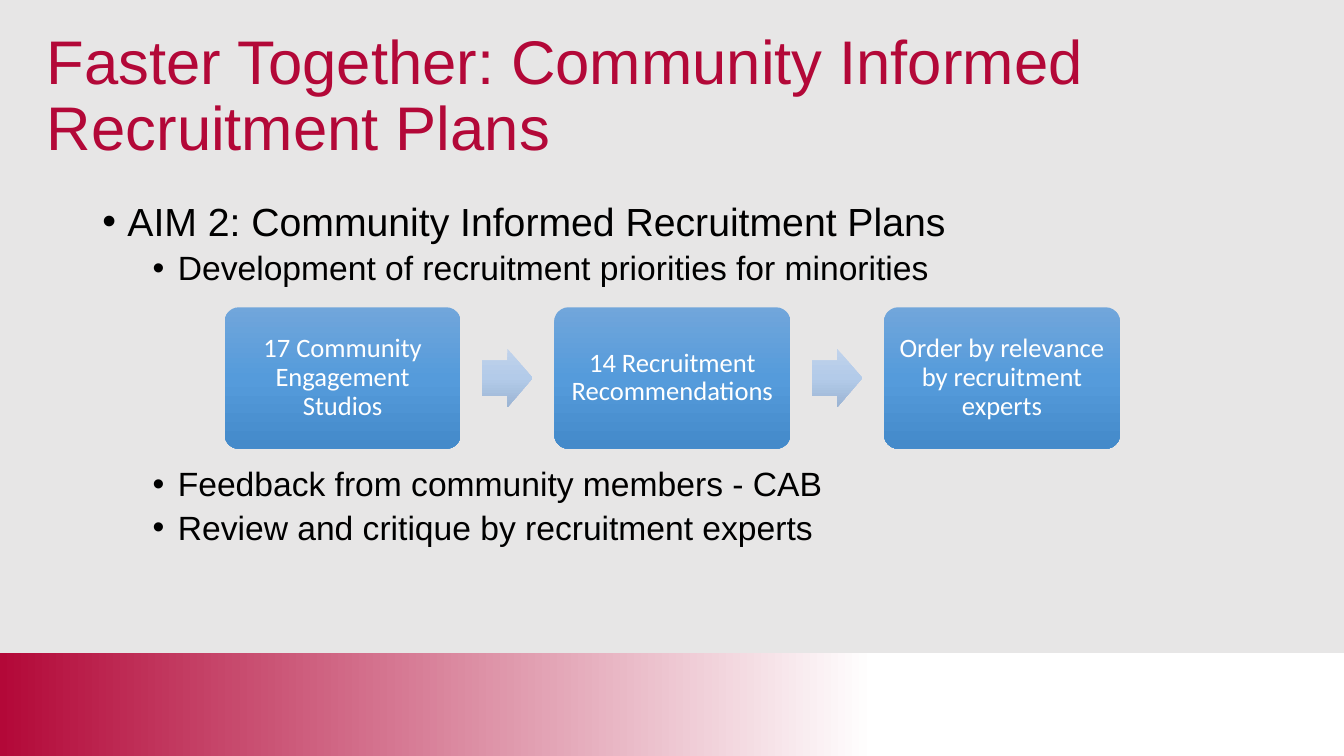
import copy

import lxml.etree
import pptx
import pptx.dml.color
import pptx.enum.shapes
import pptx.enum.text
import pptx.oxml.ns
import pptx.util

Pt = pptx.util.Pt
RGB = pptx.dml.color.RGBColor
SHAPE = pptx.enum.shapes.MSO_SHAPE
ALIGN = pptx.enum.text.PP_ALIGN
ANCHOR = pptx.enum.text.MSO_ANCHOR
qn = pptx.oxml.ns.qn

GREY = RGB(0xE7, 0xE6, 0xE6)
CRIMSON = RGB(0xB3, 0x08, 0x38)
WHITE = RGB(0xFF, 0xFF, 0xFF)
BLACK = RGB(0, 0, 0)
BAND_STOPS = [(0.35, WHITE), (1, CRIMSON)]
STEP_STOPS = [(0, RGB(0x71, 0xA6, 0xDB)), (0.5, RGB(0x55, 0x9B, 0xDB)),
              (1, RGB(0x44, 0x8A, 0xCA))]
ARROW_STOPS = [(0, RGB(0xC0, 0xD2, 0xEB)), (0.5, RGB(0xB3, 0xCB, 0xE9)),
               (1, RGB(0x9B, 0xB4, 0xD3))]

TITLE = "Faster Together: Community Informed Recruitment Plans"
BULLETS = [
    ("AIM 2: Community Informed Recruitment Plans", 0, 0),
    ("Development of recruitment priorities for minorities", 1, 5),
    ("Feedback from community members - CAB", 1, 128.5),
    ("Review and critique by recruitment experts", 1, 5),
]
STEPS = ["17 Community Engagement Studios", "14 Recruitment Recommendations",
         "Order by relevance by recruitment experts"]


def add_text(p, text, size, color, font="Arial", align=ALIGN.LEFT, before=0):
    """Fill a paragraph with one formatted run."""
    p.alignment = align
    p.line_spacing = 0.9
    p.space_before = Pt(before)
    r = p.add_run()
    r.text = text
    r.font.size = Pt(size)
    r.font.name = font
    r.font.color.rgb = color


def add_bullet(p, left, hanging):
    """Give a paragraph a round bullet with a hanging indent."""
    pPr = p._p.get_or_add_pPr()
    pPr.set("marL", str(Pt(left)))
    pPr.set("indent", str(-Pt(hanging)))
    lxml.etree.SubElement(pPr, qn("a:buFont")).set("typeface", "Arial")
    lxml.etree.SubElement(pPr, qn("a:buChar")).set("char", "•")


def add_gradient_shape(s, kind, box, stops, angle):
    """Add a borderless shape with a linear gradient."""
    sp = s.shapes.add_shape(kind, *map(Pt, box))
    sp.shadow.inherit = False
    sp.line.fill.background()
    sp.fill.gradient()
    sp.fill.gradient_angle = angle
    gs_list = sp._element.spPr.find(qn("a:gradFill")).find(qn("a:gsLst"))
    for _ in stops[2:]:
        gs_list.append(copy.deepcopy(gs_list[-1]))
    for stop, (position, color) in zip(sp.fill.gradient_stops, stops):
        stop.position = position
        stop.color.rgb = color
    return sp


def add_title(s, box):
    """Place the slide title, centred vertically in its box."""
    tf = s.shapes.add_textbox(*map(Pt, box)).text_frame
    tf.word_wrap = True
    tf.vertical_anchor = ANCHOR.MIDDLE
    add_text(tf.paragraphs[0], TITLE, 44, CRIMSON)


def add_body(s, box):
    """Place the bullets, leaving a gap for the process flow."""
    tf = s.shapes.add_textbox(*map(Pt, box)).text_frame
    tf.word_wrap = True
    for i, (text, level, before) in enumerate(BULLETS):
        p = tf.add_paragraph() if i else tf.paragraphs[0]
        p.level = level
        add_text(p, text, 24 if level else 28, BLACK, before=before)
        add_bullet(p, 18 + 36 * level, 18)


def add_flow(s, box):
    """Place equally spaced steps with an arrow in each gap."""
    left, top, width, height = box
    step_w, arrow_w, arrow_h = 168.5, 36, 41.75
    pitch = (width - step_w) / (len(STEPS) - 1)
    for i, text in enumerate(STEPS):
        x = left + i * pitch
        sp = add_gradient_shape(s, SHAPE.ROUNDED_RECTANGLE,
                                (x, top, step_w, height), STEP_STOPS, 270)
        sp.adjustments[0] = 0.1
        tf = sp.text_frame
        tf.word_wrap = True
        tf.vertical_anchor = ANCHOR.MIDDLE
        tf.margin_left = tf.margin_right = Pt(5.7)
        tf.margin_top = tf.margin_bottom = Pt(5.7)
        add_text(tf.paragraphs[0], text, 19, WHITE, font="Calibri", align=ALIGN.CENTER)
        if i < len(STEPS) - 1:
            arrow_x = x + (step_w + pitch - arrow_w) / 2
            arrow_y = top + (height - arrow_h) / 2
            arrow = add_gradient_shape(s, SHAPE.RIGHT_ARROW,
                                       (arrow_x, arrow_y, arrow_w, arrow_h),
                                       ARROW_STOPS, 270)
            arrow.adjustments[0] = 0.6
            arrow.adjustments[1] = 0.5


def main():
    """Build the slide and save it."""
    prs = pptx.Presentation()
    prs.slide_width = Pt(960)
    prs.slide_height = Pt(540)
    s = prs.slides.add_slide(prs.slide_layouts[6])
    s.background.fill.solid()
    s.background.fill.fore_color.rgb = GREY
    add_gradient_shape(s, SHAPE.RECTANGLE, (0, 466.5, 960, 73.5), BAND_STOPS, 180)
    add_title(s, (26.5, 17.25, 828, 104.5))
    add_body(s, (66, 141, 828, 379))
    add_flow(s, (160.5, 219.5, 639.5, 101))
    prs.save("out.pptx")


if __name__ == "__main__":
    main()
